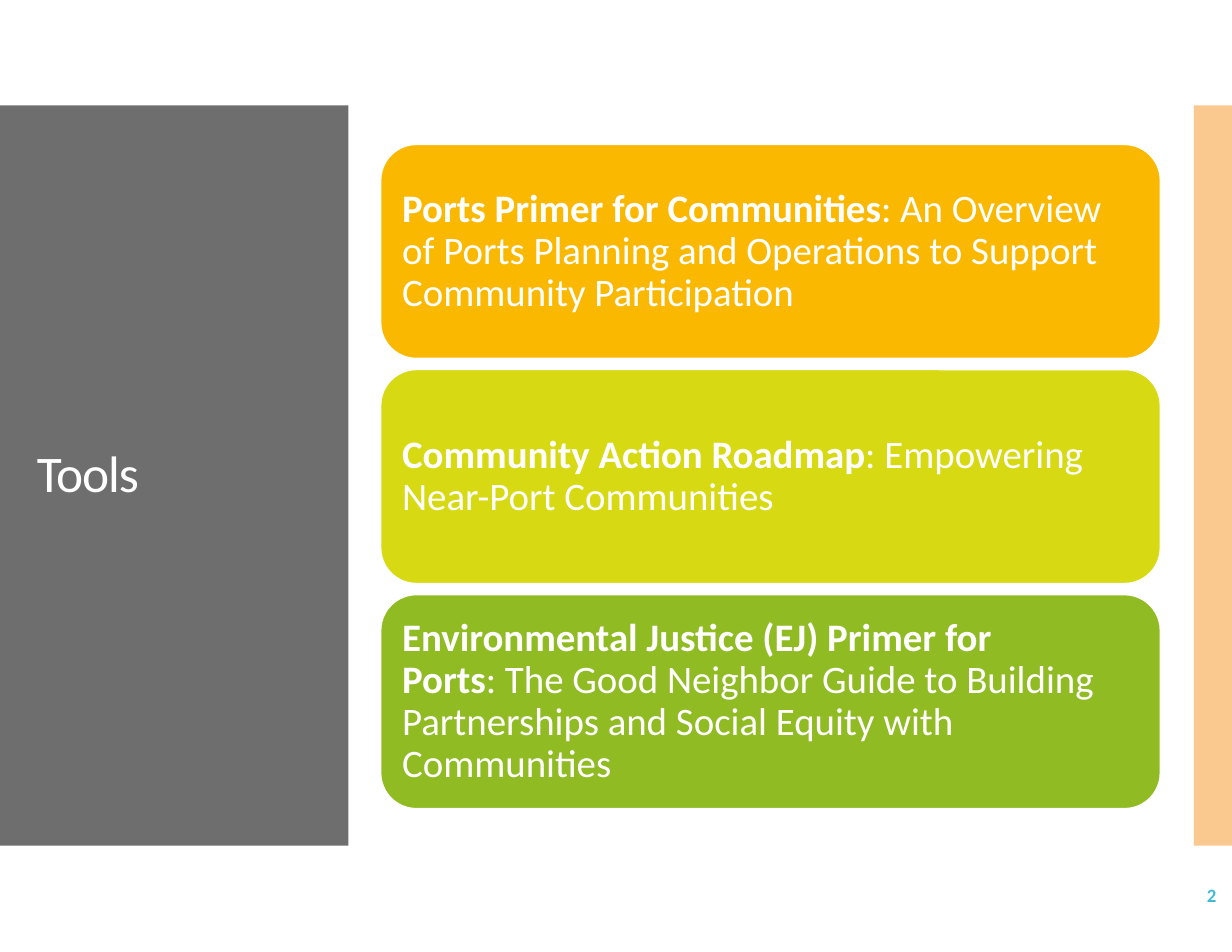
from pptx import Presentation
from pptx import util as u
from pptx.dml.color import RGBColor
from pptx.enum import shapes, text
from lxml import etree

NBSP = chr(160)
TITLE = "Tools"
PAGE = "2"
CARDS = [
    ("Ports Primer for Communities",
     f":{NBSP}An Overview of Ports Planning and Operations to Support Community Participation",
     "FAB900"),
    ("Community Action Roadmap",
     ": Empowering Near-Port Communities",
     "D7D913"),
    ("Environmental Justice (EJ) Primer for Ports",
     f":{NBSP}The Good Neighbor Guide to Building Partnerships{NBSP}and Social Equity with Communities",
     "90BB23"),
]
THEME = dict(font="Calibri", white="FFFFFF", panel="6E6E6E", accent="F79421",
             page="40BAD2", title=33, body=25, number=12.1)
BAND_TOP, BAND_H = 0.94, 6.61
CARD_X, CARD_Y, CARD_W, CARD_H, CARD_GAP = 3.4, 1.29, 6.96, 1.91, 0.1


def color(name):
    return RGBColor.from_string(THEME.get(name, name))


def box(s, kind, x, y, w, h, fill):
    sp = s.shapes.add_shape(kind, *map(u.Inches, (x, y, w, h)))
    sp.shadow.inherit = False
    sp.fill.solid()
    sp.fill.fore_color.rgb = color(fill)
    sp.line.fill.background()
    return sp


def frame(sp, mx, my):
    tf = sp.text_frame
    tf.word_wrap = True
    tf.auto_size = text.MSO_AUTO_SIZE.NONE
    tf.vertical_anchor = text.MSO_ANCHOR.MIDDLE
    tf.margin_left = tf.margin_right = u.Inches(mx)
    tf.margin_top = tf.margin_bottom = u.Inches(my)
    return tf.paragraphs[0]


def add_run(p, words, size, fill="white", bold=False):
    r = p.add_run()
    r.text = words
    r.font.name = THEME["font"]
    r.font.size = u.Pt(THEME[size])
    r.font.bold = bold
    r.font.color.rgb = color(fill)
    return r


prs = Presentation()
prs.slide_width, prs.slide_height = u.Inches(11), u.Inches(8.5)
s = prs.slides.add_slide(prs.slide_layouts[5])

rect = shapes.MSO_SHAPE.RECTANGLE
box(s, rect, 0, BAND_TOP, 3.11, BAND_H, "panel")
strip = box(s, rect, 10.66, BAND_TOP, 0.34, BAND_H, "accent")
clr = strip.fill._xPr.find(".//{*}srgbClr")
etree.SubElement(clr, clr.tag.replace("srgbClr", "alpha"), val="50000")

title = s.shapes.title
title.left, title.top, title.width, title.height = map(u.Inches, (0.23, 1.48, 2.66, 5.54))
strip._element.addnext(title._element)
p = frame(title, 0.1, 0.05)
p.alignment = text.PP_ALIGN.LEFT
p.line_spacing = 0.9
add_run(p, TITLE, "title").font._element.set("spc", "-70")

for i, (name, detail, fill) in enumerate(CARDS):
    sp = box(s, shapes.MSO_SHAPE.ROUNDED_RECTANGLE,
             CARD_X, CARD_Y + i * (CARD_H + CARD_GAP), CARD_W, CARD_H, fill)
    sp.line.color.rgb = color("white")
    sp.line.width = u.Pt(0.85)
    p = frame(sp, 0.1, 0.1)
    p.alignment = text.PP_ALIGN.LEFT
    p.line_spacing = 0.9
    add_run(p, name, "body", bold=True)
    add_run(p, detail, "body")

number = s.shapes.add_textbox(*map(u.Inches, (9.59, 7.77, 1.38, 0.44)))
p = frame(number, 0.11, 0.06)
p.alignment = text.PP_ALIGN.RIGHT
add_run(p, PAGE, "number", "page", bold=True)

prs.save("out.pptx")
